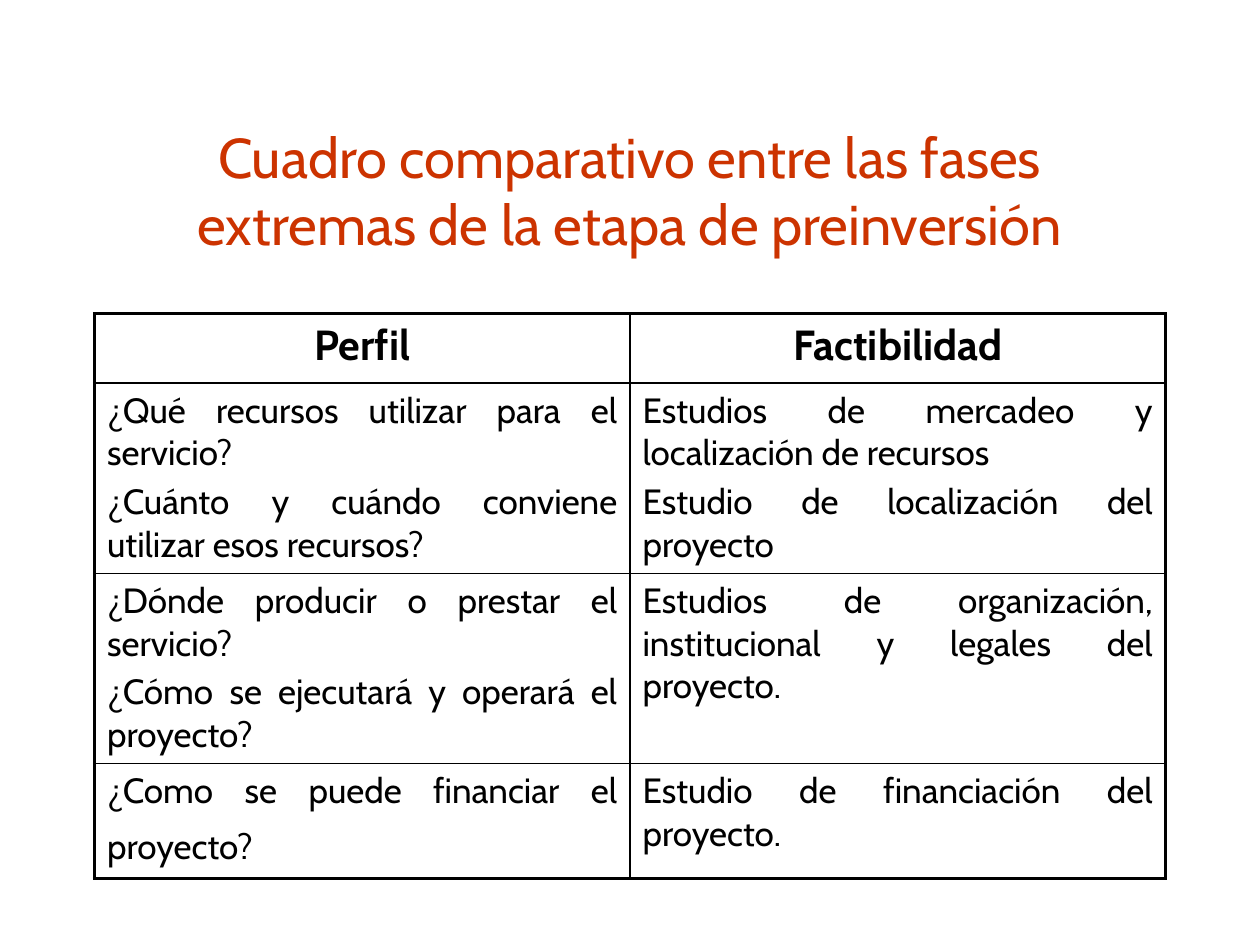
from lxml import etree
from pptx import Presentation
from pptx.dml.color import RGBColor
from pptx.enum.text import MSO_ANCHOR, PP_ALIGN
from pptx.oxml.ns import qn
from pptx.util import Inches, Pt

CENTER, JUSTIFY = PP_ALIGN.CENTER, PP_ALIGN.JUSTIFY
MIDDLE = MSO_ANCHOR.MIDDLE
FONT = "Cabin"
COLORS = {"title": "CC3300", "text": "000000", "line": "000000", "fill": "FFFFFF"}
THICK, THIN = 2.25, 1

TITLE = "Cuadro comparativo entre las fases extremas de la etapa de preinversión"
HEADS = (["Perfil"], ["Factibilidad"])
ROWS = [
    HEADS,
    (["¿Qué recursos utilizar para el servicio?",
      "¿Cuánto y cuándo conviene utilizar esos recursos?"],
     ["Estudios de mercadeo y localización de recursos",
      "Estudio de localización del proyecto"]),
    (["¿Dónde producir o prestar el servicio?",
      "¿Cómo se ejecutará y operará el proyecto?"],
     ["Estudios de organización, institucional y legales del proyecto."]),
    (["¿Como se puede financiar el proyecto?"],
     ["Estudio de financiación del proyecto."]),
]
HEIGHTS = [0.55, 1.51, 1.51, 0.91]
WIDE, HIGH = 10, 7.5
LEFT, TOP = 0.75, 2.49
SPAN = WIDE - 2 * LEFT


def style(par, size, color, align, bold=False):
    par.alignment = align
    font = par.font
    font.name, font.size, font.bold = FONT, Pt(size), bold
    font.color.rgb = RGBColor.from_string(COLORS[color])


def border(cell, side, width):
    """Draw one side (L, R, T or B) of a cell."""
    props = cell._tc.get_or_add_tcPr()
    line = etree.SubElement(props, qn(f"a:ln{side}"), w=str(Pt(width)))
    fill = etree.SubElement(line, qn("a:solidFill"))
    etree.SubElement(fill, qn("a:srgbClr"), val=COLORS["line"])


def fill_cell(cell, texts, head):
    cell.fill.solid()
    cell.fill.fore_color.rgb = RGBColor.from_string(COLORS["fill"])
    frame = cell.text_frame
    for i, text in enumerate(texts):
        par = frame.add_paragraph() if i else frame.paragraphs[0]
        par.add_run().text = text
        style(par, 24 if head else 20, "text", CENTER if head else JUSTIFY, head)
        if i:
            par.space_before = Pt(3.5)


def add_title(slide):
    box = slide.shapes.add_textbox(
        Inches(LEFT), Inches(1.07), Inches(SPAN), Inches(0.87))
    frame = box.text_frame
    frame.word_wrap = True
    frame.vertical_anchor = MIDDLE
    par = frame.paragraphs[0]
    par.add_run().text = TITLE
    style(par, 32, "title", CENTER)


def add_grid(slide):
    rows, cols = len(ROWS), len(HEADS)
    table = slide.shapes.add_table(
        rows, cols, Inches(LEFT), Inches(TOP),
        Inches(SPAN), Inches(sum(HEIGHTS))).table
    table.first_row = table.horz_banding = False
    for col in table.columns:
        col.width = Inches(SPAN / cols)
    for r, row in enumerate(ROWS):
        table.rows[r].height = Inches(HEIGHTS[r])
        for c, texts in enumerate(row):
            cell = table.cell(r, c)
            edges = {"L": c == 0, "R": c == cols - 1,
                     "T": r == 0, "B": r == rows - 1}
            for side, outer in edges.items():
                border(cell, side, THICK if outer else THIN)
            fill_cell(cell, texts, r == 0)
    # A larger closing space makes the last line of this cell taller.
    tail = table.cell(rows - 1, 0).text_frame.paragraphs[0].add_run()
    tail.text = " "
    tail.font.size = Pt(28)


def main():
    deck = Presentation()
    deck.slide_width, deck.slide_height = Inches(WIDE), Inches(HIGH)
    slide = deck.slides.add_slide(deck.slide_layouts[6])
    add_grid(slide)
    add_title(slide)
    deck.save("out.pptx")


if __name__ == "__main__":
    main()
